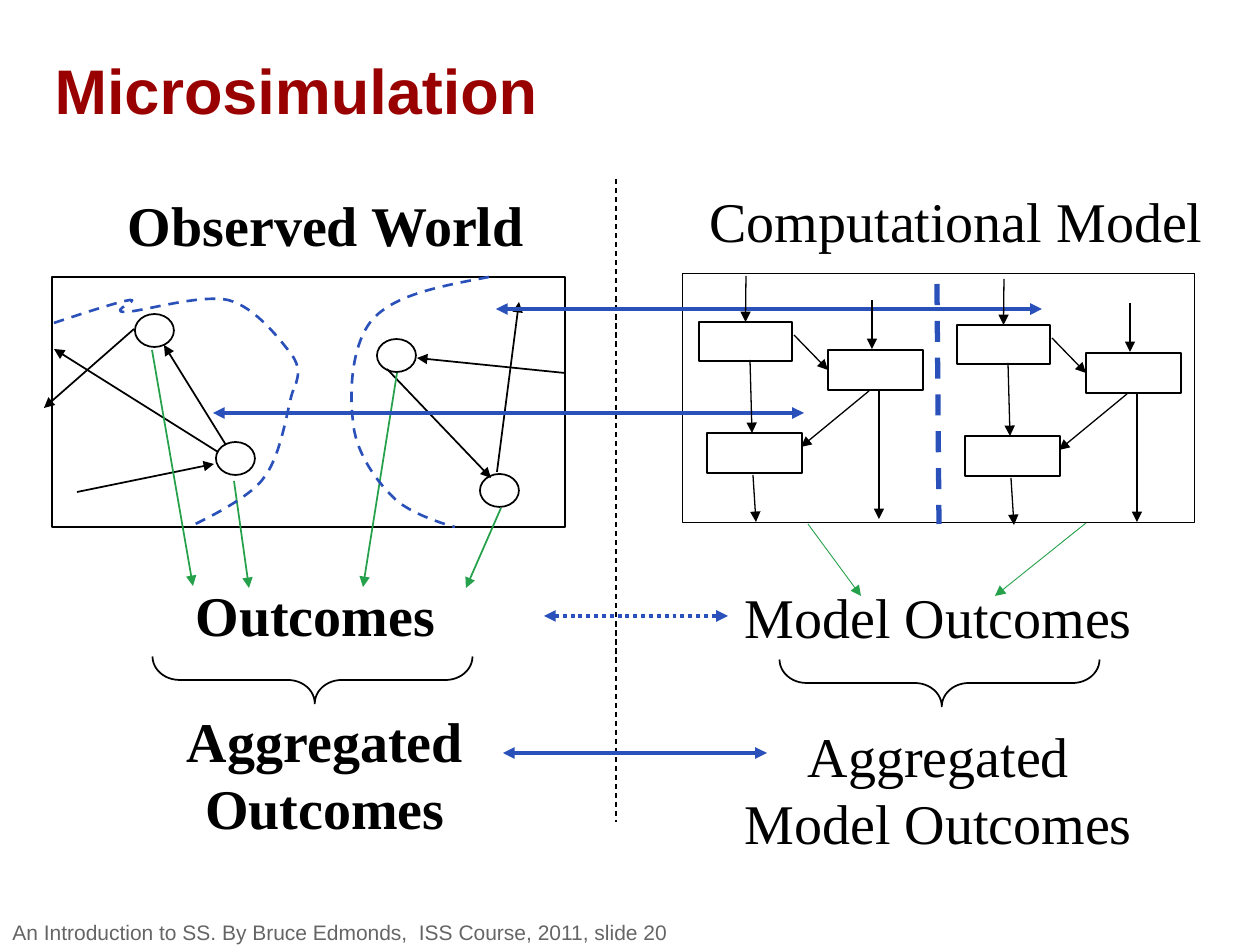
from lxml import etree
from pptx import Presentation
from pptx.dml.color import RGBColor
from pptx.enum.dml import MSO_LINE
from pptx.enum.shapes import MSO_CONNECTOR, MSO_SHAPE
from pptx.enum.text import MSO_ANCHOR, PP_ALIGN
from pptx.oxml.ns import qn
from pptx.util import Inches, Pt

PX = Inches(1) / 126
BLACK = RGBColor(0x00, 0x00, 0x00)
RED = RGBColor(0x99, 0x00, 0x00)
GREEN = RGBColor(0x25, 0xA1, 0x4B)
BLUE = RGBColor(0x2A, 0x50, 0xBA)
GREY = RGBColor(0x65, 0x65, 0x65)
RECT, OVAL, BRACE = MSO_SHAPE.RECTANGLE, MSO_SHAPE.OVAL, MSO_SHAPE.RIGHT_BRACE
STRAIGHT = MSO_CONNECTOR.STRAIGHT
DASH, DOT = MSO_LINE.DASH, MSO_LINE.ROUND_DOT
LEFT, CENTER = PP_ALIGN.LEFT, PP_ALIGN.CENTER
TOP, MIDDLE = MSO_ANCHOR.TOP, MSO_ANCHOR.MIDDLE
SANS, SERIF = "Arial", "Times New Roman"

ACTORS = [(135, 314), (377, 339), (216, 442), (480, 474)]
MOVES = [(134, 329, 44, 408), (387, 369, 491, 478), (565, 373, 417, 358),
         (497, 472, 519, 302), (218, 452, 54, 349), (226, 445, 164, 345),
         (77, 492, 214, 464)]
RESULTS = [(234, 481, 249, 588), (397, 373, 363, 587),
           (501, 508, 466, 588), (152, 350, 193, 586)]
YIELDS = [(808, 524, 861, 596), (1086, 523, 995, 596)]
BOXES = [(699, 322, 93, 39), (828, 350, 95, 40), (707, 433, 95, 40)]
STEPS = [((872, 300, 872, 349), None), ((746, 276, 746, 324), (0, 0)),
         ((750, 360, 752, 433), None), ((869, 391, 801, 447), None),
         ((794, 335, 828, 371), (1, 1)), ((879, 391, 879, 519), None),
         ((753, 475, 756, 522), None)]
WEST = [(54, 323),
        (87, 312), (118, 302), (130, 300), (141, 299), (108, 312), (125, 312),
        (141, 312), (199, 294), (228, 300), (256, 307), (281, 341), (292, 355),
        (302, 370), (297, 378), (296, 384), (295, 392), (297, 379), (292, 394),
        (287, 411), (281, 457), (263, 479), (247, 501), (189, 527), (189, 527)]
EAST = [(489, 277),
        (442, 286), (397, 294), (374, 318), (352, 341), (349, 390), (353, 421),
        (355, 450), (374, 478), (391, 495), (408, 515), (455, 527), (455, 527)]


def px(*nums):
    return [round(n * PX) for n in nums]


def pen(line, color, width, dash=None):
    line.color.rgb = color
    line.width = Pt(width)
    if dash:
        line.dash_style = dash


def fill_text(frame, lines, font, size, color, bold=False, align=LEFT, anchor=TOP):
    frame.vertical_anchor = anchor
    para = frame.paragraphs[0]
    para.alignment = align
    for num, line in enumerate(lines):
        if num:
            para.add_line_break()
        run = para.add_run()
        run.text = line
        run.font.name = font
        run.font.size = Pt(size)
        run.font.bold = bold
        run.font.color.rgb = color


def add_title(slide, text):
    title = slide.shapes.title
    title.left, title.top, title.width, title.height = px(42, 31, 1061, 116)
    fill_text(title.text_frame, [text], SANS, 36, RED, True, LEFT, MIDDLE)


def add_label(slide, box, lines, bold):
    frame = slide.shapes.add_textbox(*px(*box)).text_frame
    frame.word_wrap = False
    fill_text(frame, lines, SERIF, 32, BLACK, bold, CENTER)


def add_footer(slide, text):
    frame = slide.shapes.add_textbox(*px(0, 919, 1260, 26)).text_frame
    frame.word_wrap = True
    frame.margin_top = frame.margin_bottom = 0
    fill_text(frame, [text], SANS, 12, GREY, anchor=MIDDLE)


def add_shape(slide, kind, box, width=1):
    shape = slide.shapes.add_shape(kind, *px(*box))
    shape.shadow.inherit = False
    shape.fill.background()
    pen(shape.line, BLACK, width)
    return shape


def add_brace(slide, left, top):
    brace = add_shape(slide, BRACE, (left, top, 47, 320))
    brace.rotation = 90
    brace.adjustments[0] = 0.575
    brace.adjustments[1] = 0.493


def add_line(slide, ends, color, width, dash=None, tips=()):
    line = slide.shapes.add_connector(STRAIGHT, *px(*ends))
    pen(line.line, color, width, dash)
    props = line._element.spPr
    for tip in tips:
        etree.SubElement(props.find(qn("a:ln")), qn(tip), type="triangle")
    etree.SubElement(props, qn("a:effectLst"))
    return line


def add_arrow(slide, ends, color=BLACK, width=1):
    return add_line(slide, ends, color, width, tips=("a:tailEnd",))


def add_link(slide, ends, dash=None):
    add_line(slide, ends, BLUE, 2.25, dash, ("a:headEnd", "a:tailEnd"))


def add_curve(slide, nodes):
    path = slide.shapes.build_freeform(*px(*nodes[0]))
    path.add_line_segments([px(*node) for node in nodes[3::3]], close=False)
    curve = path.convert_to_shape()
    bends = list(curve._element.iter(qn("a:lnTo")))
    for num, bend in enumerate(bends):
        bend.tag = qn("a:cubicBezTo")
        for spot, node in enumerate(nodes[3 * num + 1:3 * num + 3]):
            x, y = px(*node)
            point = etree.Element(qn("a:pt"), x=str(x - curve.left), y=str(y - curve.top))
            bend.insert(spot, point)
    curve.shadow.inherit = False
    curve.fill.background()
    pen(curve.line, BLUE, 1.5, DASH)


def add_model(slide, dx, dy):
    boxes = [add_shape(slide, RECT, (x + dx, y + dy, w, h), 0.75)
             for x, y, w, h in BOXES]
    for (x1, y1, x2, y2), goal in STEPS:
        arrow = add_arrow(slide, (x1 + dx, y1 + dy, x2 + dx, y2 + dy), width=0.75)
        if goal:
            box, side = goal
            arrow.end_connect(boxes[box], side)


def main():
    deck = Presentation()
    deck.slide_width, deck.slide_height = px(1260, 945)
    slide = deck.slides.add_slide(deck.slide_layouts[5])
    add_title(slide, "Microsimulation")
    add_label(slide, (107, 184, 438, 81), ["Observed World"], True)
    add_label(slide, (693, 180, 527, 81), ["Computational Model"], False)
    add_line(slide, (616, 179, 616, 822), BLACK, 0.75, DASH)
    add_shape(slide, RECT, (52, 277, 513, 250))
    add_label(slide, (182, 574, 267, 81), ["Outcomes"], True)
    add_label(slide, (732, 576, 413, 79), ["Model Outcomes"], False)
    for x, y in ACTORS:
        add_shape(slide, OVAL, (x, y, 39, 33))
    for ends in MOVES:
        add_arrow(slide, ends)
    add_label(slide, (173, 700, 304, 149), ["Aggregated", "Outcomes"], True)
    add_label(slide, (732, 715, 413, 147), ["Aggregated", "Model Outcomes"], False)
    add_brace(slide, 289, 520)
    add_brace(slide, 916, 523)
    for ends in RESULTS:
        add_arrow(slide, ends, GREEN)
    add_shape(slide, RECT, (682, 274, 513, 249), 0.5)
    add_link(slide, (503, 753, 767, 753))
    add_link(slide, (544, 616, 728, 616), DOT)
    add_footer(slide, "An Introduction to SS. By Bruce Edmonds,  ISS Course, 2011, slide 20")
    add_curve(slide, WEST)
    add_curve(slide, EAST)
    add_line(slide, (937, 284, 939, 524), BLUE, 3, DASH)
    add_link(slide, (496, 309, 1042, 309))
    add_link(slide, (213, 413, 804, 413))
    add_model(slide, 0, 0)
    add_model(slide, 258, 3)
    for ends in YIELDS:
        add_arrow(slide, ends, GREEN, 0.5)
    deck.save("out.pptx")


if __name__ == "__main__":
    main()
